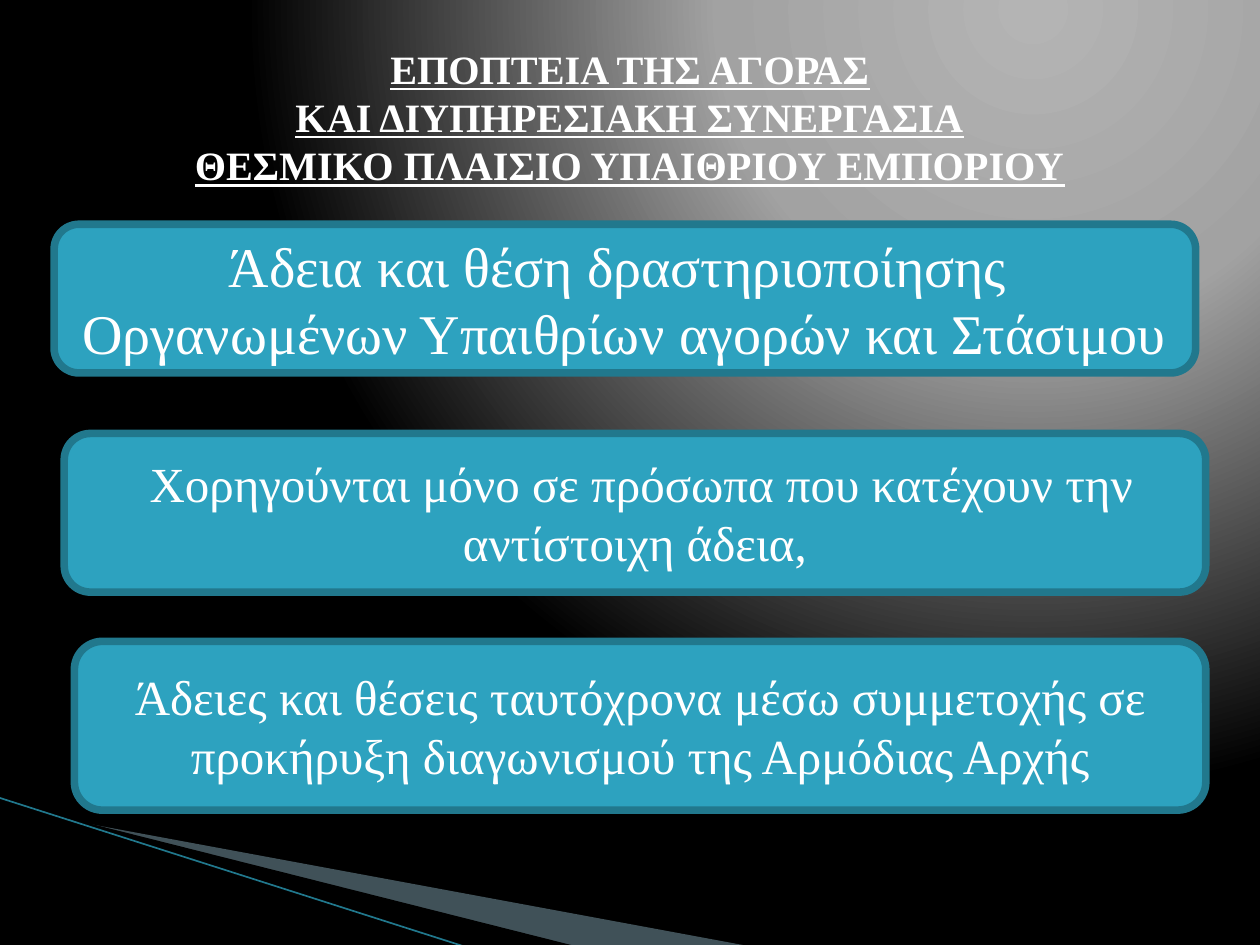
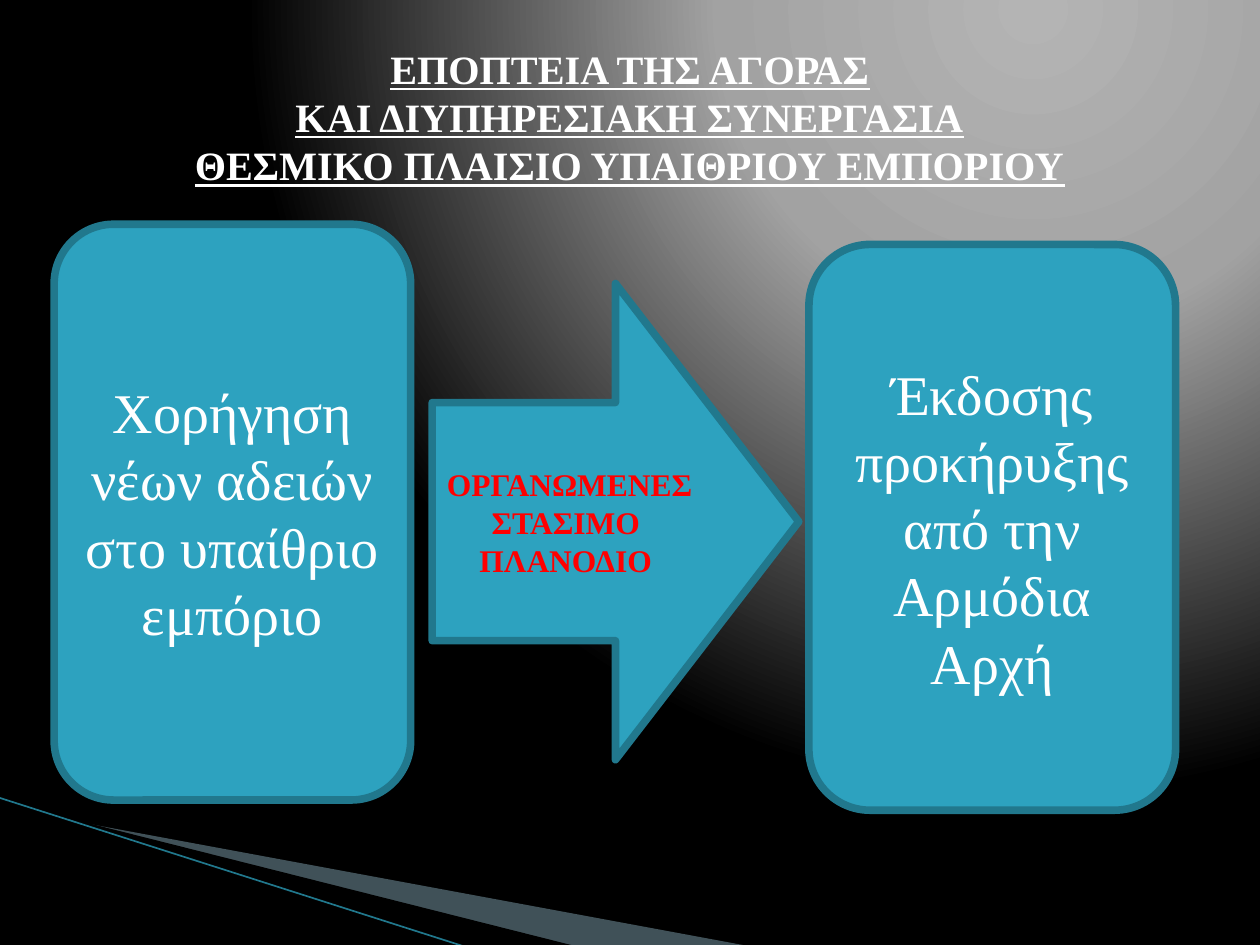
from dataclasses import dataclass

from lxml import etree
from pptx import Presentation
from pptx.dml.color import RGBColor
from pptx.enum import shapes, text
from pptx.oxml import parse_xml
from pptx.oxml.ns import nsdecls, qn
from pptx.util import Inches, Pt


@dataclass(frozen=True)
class Theme:
    font: str = "Times New Roman"
    white: str = "FFFFFF"
    red: str = "FF0000"
    black: str = "000000"
    box_fill: str = "2DA2BF"
    box_line: str = "21788D"
    wedge: str = "A0CBDC"
    wedge_alpha: int = 40
    glow: tuple = ((0, "B4B4B4"), (40, "A2A2A2"), (100, "000000"))
    title_size: int = 23
    large: int = 32
    medium: int = 28
    small: int = 18
    box_line_width: float = 4.33
    rule_width: float = 0.95


THEME = Theme()
TITLE = (
    "ΕΠΟΠΤΕΙΑ ΤΗΣ ΑΓΟΡΑΣ",
    "ΚΑΙ ΔΙΥΠΗΡΕΣΙΑΚΗ ΣΥΝΕΡΓΑΣΙΑ",
    "ΘΕΣΜΙΚΟ ΠΛΑΙΣΙΟ ΥΠΑΙΘΡΙΟΥ ΕΜΠΟΡΙΟΥ",
)


@dataclass(frozen=True)
class Box:
    left: float
    top: float
    width: float
    height: float
    lines: tuple
    size: int = THEME.large
    color: str = THEME.white
    bold: bool = False
    kind: shapes.MSO_SHAPE = shapes.MSO_SHAPE.ROUNDED_RECTANGLE


LICENCE_BOXES = (
    Box(0.43, 1.78, 9.06, 1.18, ("Άδεια και θέση δραστηριοποίησης ",
                                 "Οργανωμένων Υπαιθρίων αγορών και Στάσιμου")),
    Box(0.51, 3.44, 9.06, 1.26,
        (" Χορηγούνται μόνο σε πρόσωπα που κατέχουν την αντίστοιχη άδεια,",),
        THEME.medium),
    Box(0.59, 5.09, 8.98, 1.34,
        ("Άδειες και θέσεις ταυτόχρονα μέσω συμμετοχής σε προκήρυξη "
         "διαγωνισμού της Αρμόδιας Αρχής",), THEME.medium),
)
PROCESS_BOXES = (
    Box(0.43, 1.78, 2.83, 4.57, ("Χορήγηση νέων αδειών στο υπαίθριο εμπόριο",)),
    Box(3.43, 2.25, 2.91, 3.78, ("ΟΡΓΑΝΩΜΕΝΕΣ", "ΣΤΑΣΙΜΟ ", "ΠΛΑΝΟΔΙΟ "),
        THEME.small, THEME.red, True, shapes.MSO_SHAPE.RIGHT_ARROW),
    Box(6.42, 1.94, 2.91, 4.49, ("Έκδοσης προκήρυξης από την Αρμόδια Αρχή",)),
)


def rgb(color: str) -> RGBColor:
    return RGBColor.from_string(color)


def format_paragraph(p, size: int, color: str, bold: bool = False,
                     underline: bool = False) -> None:
    p.alignment = text.PP_ALIGN.CENTER
    for r in p.runs:
        r.font.name = THEME.font
        r.font.size = Pt(size)
        r.font.bold = bold
        r.font.underline = underline
        r.font.color.rgb = rgb(color)


def add_polygon(slide, points: tuple, color: str):
    corners = [(Inches(x), Inches(y)) for x, y in points]
    builder = slide.shapes.build_freeform(*corners[0], scale=1.0)
    builder.add_line_segments(corners[1:], close=True)
    sp = builder.convert_to_shape()
    sp.shadow.inherit = False
    sp.fill.solid()
    sp.fill.fore_color.rgb = rgb(color)
    sp.line.fill.background()
    return sp


def set_background(layout) -> None:
    """Radial glow from the upper right."""
    stops = "".join(f'<a:gs pos="{pos * 1000}"><a:srgbClr val="{color}"/></a:gs>'
                    for pos, color in THEME.glow)
    bg = parse_xml(
        f'<p:bg {nsdecls("p", "a")}><p:bgPr><a:gradFill rotWithShape="1">'
        f'<a:gsLst>{stops}</a:gsLst><a:path path="circle">'
        '<a:fillToRect l="65000" t="0" r="0" b="98000"/></a:path></a:gradFill>'
        '<a:effectLst/></p:bgPr></p:bg>')
    layout.element.find(qn("p:cSld")).insert(0, bg)


def move_decoration_to_layout(slide, layout) -> None:
    """Draw the corner wedges and rule, then share them through the layout."""
    wedge = add_polygon(
        slide, ((0.55, 6.51), (5.95, 7.51), (4.56, 7.51), (0.55, 6.5)), THEME.wedge)
    color = wedge.fill._xPr.find(f".//{qn('a:srgbClr')}")
    etree.SubElement(color, qn("a:alpha"), val=str(THEME.wedge_alpha * 1000))
    mask = add_polygon(
        slide, ((0.53, 6.49), (4.57, 7.51), (3.72, 7.52), (0.54, 6.5)), THEME.black)

    rule = slide.shapes.add_connector(
        shapes.MSO_CONNECTOR.STRAIGHT,
        Inches(-0.01), Inches(6.33), Inches(3.71), Inches(7.52))
    rule.line.color.rgb = rgb(THEME.box_line)
    rule.line.width = Pt(THEME.rule_width)
    etree.SubElement(rule.element.spPr, qn("a:effectLst"))

    for sp in (wedge, mask, rule):
        layout.shapes.element.append(sp.element)


def add_title(slide) -> None:
    title = slide.shapes.title
    title.left, title.top = Inches(0.5), Inches(0.3)
    title.width, title.height = Inches(9), Inches(1.25)
    tf = title.text_frame
    tf.auto_size = text.MSO_AUTO_SIZE.NONE
    tf.vertical_anchor = text.MSO_ANCHOR.MIDDLE
    p = tf.paragraphs[0]
    for i, line in enumerate(TITLE):
        if i:
            p.add_line_break()
        p.add_run().text = line
    format_paragraph(p, THEME.title_size, THEME.white, bold=True, underline=True)


def add_box(slide, box: Box) -> None:
    sp = slide.shapes.add_shape(
        box.kind, Inches(box.left), Inches(box.top),
        Inches(box.width), Inches(box.height))
    sp.shadow.inherit = False
    sp.fill.solid()
    sp.fill.fore_color.rgb = rgb(THEME.box_fill)
    sp.line.color.rgb = rgb(THEME.box_line)
    sp.line.width = Pt(THEME.box_line_width)
    tf = sp.text_frame
    tf.word_wrap = True
    tf.vertical_anchor = text.MSO_ANCHOR.MIDDLE
    tf.text = "\n".join(box.lines)
    for p in tf.paragraphs:
        format_paragraph(p, box.size, box.color, box.bold)


def main() -> None:
    prs = Presentation()
    prs.slide_width, prs.slide_height = Inches(10), Inches(7.5)
    layout = prs.slide_layouts.get_by_name("Title Only")
    set_background(layout)

    for i, boxes in enumerate((LICENCE_BOXES, PROCESS_BOXES)):
        slide = prs.slides.add_slide(layout)
        if i == 0:
            move_decoration_to_layout(slide, layout)
        add_title(slide)
        for box in boxes:
            add_box(slide, box)

    prs.save("out.pptx")


if __name__ == "__main__":
    main()
